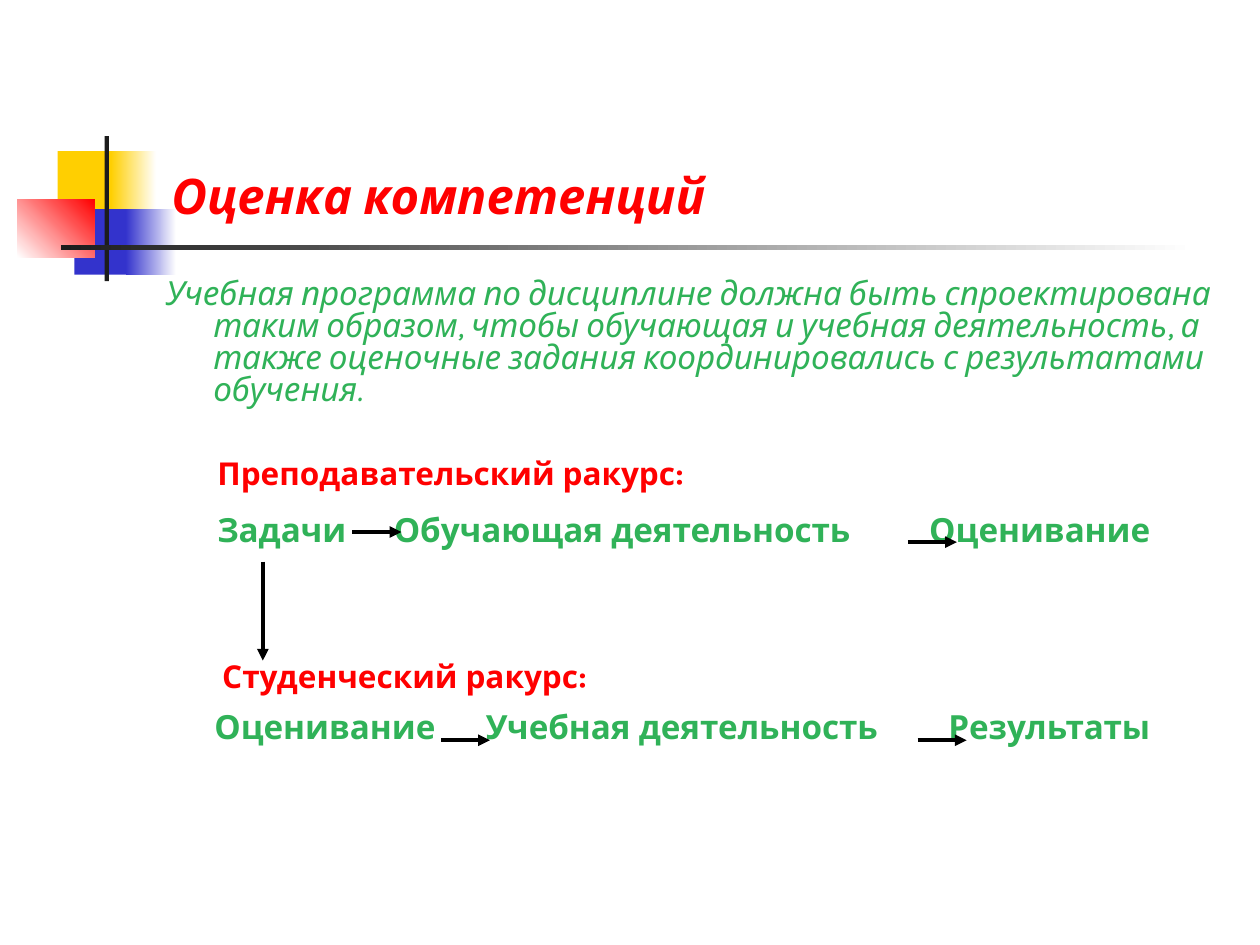
from lxml.etree import SubElement
from pptx import Presentation
from pptx.dml.color import RGBColor
from pptx.enum.shapes import MSO_CONNECTOR, MSO_SHAPE
from pptx.enum.text import MSO_ANCHOR, PP_ALIGN
from pptx.oxml.ns import qn
from pptx.util import Pt

FONT = "Karla"
COLORS = {"yellow": "FFCF01", "blue": "3333CC", "red": "FF0000", "white": "FFFFFF",
          "dark": "1C1C1C", "green": "30B258", "black": "000000"}

TITLE = "Оценка компетенций"
INTRO = ("Учебная программа по дисциплине должна быть спроектирована таким образом, "
         "чтобы обучающая и учебная деятельность, а также оценочные задания "
         "координировались с результатами обучения.")

# left, top, width, height, colour, end colour of a fade, angle
DECOR = [
    (33, 86.4, 34.8, 37.4, "yellow", None, 0),
    (63.4, 86.4, 25.9, 37.4, "yellow", "white", 0),
    (42.5, 119.5, 33.1, 37.4, "blue", None, 0),
    (72, 119.5, 28.8, 37.4, "blue", "white", 0),
    (10, 113.8, 44, 33.4, "white", "red", 45),
    (59.8, 77.8, 2.5, 82.8, "dark", None, 0),
    (34.8, 140.2, 648, 2.5, "dark", "white", 0),
]

# middle of the line, size, colour, (left, text) items
ROWS = [
    (270.4, 18, "red", [(124.2, "Преподавательский ракурс:")]),
    (302.5, 19, "green", [(124.2, "Задачи"), (225, "Обучающая деятельность"),
                          (531, "Оценивание")]),
    (386.5, 18, "red", [(127, "Студенческий ракурс:")]),
    (415, 19, "green", [(122.5, "Оценивание"), (277.5, "Учебная деятельность"),
                        (542, "Результаты")]),
]
ROW_HEIGHT = 28
CHAR_WIDTH = 0.8  # room for one letter, as a share of the text size

# x, y, dx, dy
ARROWS = [
    (201.4, 304, 28, 0),
    (518.8, 309.8, 28, 0),
    (150.2, 321, 0, 56.5),
    (252, 423, 28, 0),
    (524.4, 423, 28, 0),
]


def rgb(name):
    return RGBColor.from_string(COLORS[name])


def add_run(p, text, size, color, bold=False, italic=False):
    r = p.add_run()
    r.text = text
    r.font.name = FONT
    r.font.size = Pt(size)
    r.font.bold = bold
    r.font.italic = italic
    r.font.color.rgb = rgb(color)


def add_block(s, left, top, width, height, color, fade, angle):
    sp = s.shapes.add_shape(MSO_SHAPE.RECTANGLE, Pt(left), Pt(top), Pt(width), Pt(height))
    sp.shadow.inherit = False
    sp.line.fill.background()
    if fade is None:
        sp.fill.solid()
        sp.fill.fore_color.rgb = rgb(color)
        return
    sp.fill.gradient()
    sp.fill.gradient_angle = angle
    for stop, name in zip(sp.fill.gradient_stops, (color, fade)):
        stop.color.rgb = rgb(name)


def add_title(s):
    title = s.shapes.title
    title.left, title.top, title.width, title.height = Pt(90.7), Pt(16.6), Pt(613.4), Pt(115.2)
    title.element.getparent().append(title.element)  # in front of the blocks
    tf = title.text_frame
    tf.vertical_anchor = MSO_ANCHOR.BOTTOM
    p = tf.paragraphs[0]
    p.alignment = PP_ALIGN.LEFT
    add_run(p, TITLE, 28, "red", bold=True, italic=True)


def add_intro(s):
    tf = s.shapes.add_textbox(Pt(87.8), Pt(156.5), Pt(612), Pt(85)).text_frame
    tf.word_wrap = True
    p = tf.paragraphs[0]
    p.line_spacing = 0.8
    pPr = p._p.get_or_add_pPr()
    pPr.set("marL", str(Pt(27)))
    pPr.set("indent", str(Pt(-27)))
    add_run(p, INTRO, 19, "green", italic=True)


def add_label(s, left, middle, text, size, color):
    box = s.shapes.add_textbox(Pt(left), Pt(middle - ROW_HEIGHT / 2),
                               Pt(len(text) * size * CHAR_WIDTH), Pt(ROW_HEIGHT))
    tf = box.text_frame
    tf.margin_left = tf.margin_right = tf.margin_top = tf.margin_bottom = 0
    tf.word_wrap = True
    tf.vertical_anchor = MSO_ANCHOR.MIDDLE
    p = tf.paragraphs[0]
    p.alignment = PP_ALIGN.LEFT
    add_run(p, text, size, color, bold=True)


def add_arrow(s, x, y, dx, dy):
    arrow = s.shapes.add_connector(MSO_CONNECTOR.STRAIGHT, Pt(x), Pt(y), Pt(x + dx), Pt(y + dy))
    arrow.line.color.rgb = rgb("black")
    arrow.line.width = Pt(2.25)
    spPr = arrow.element.spPr
    SubElement(spPr.find(qn("a:ln")), qn("a:tailEnd"), type="triangle")
    SubElement(spPr, qn("a:effectLst"))


def main():
    prs = Presentation()
    prs.slide_width, prs.slide_height = Pt(720), Pt(540)
    s = prs.slides.add_slide(prs.slide_layouts[5])
    for block in DECOR:
        add_block(s, *block)
    add_title(s)
    add_intro(s)
    for middle, size, color, items in ROWS:
        for left, text in items:
            add_label(s, left, middle, text, size, color)
    for arrow in ARROWS:
        add_arrow(s, *arrow)
    prs.save("out.pptx")


if __name__ == "__main__":
    main()
